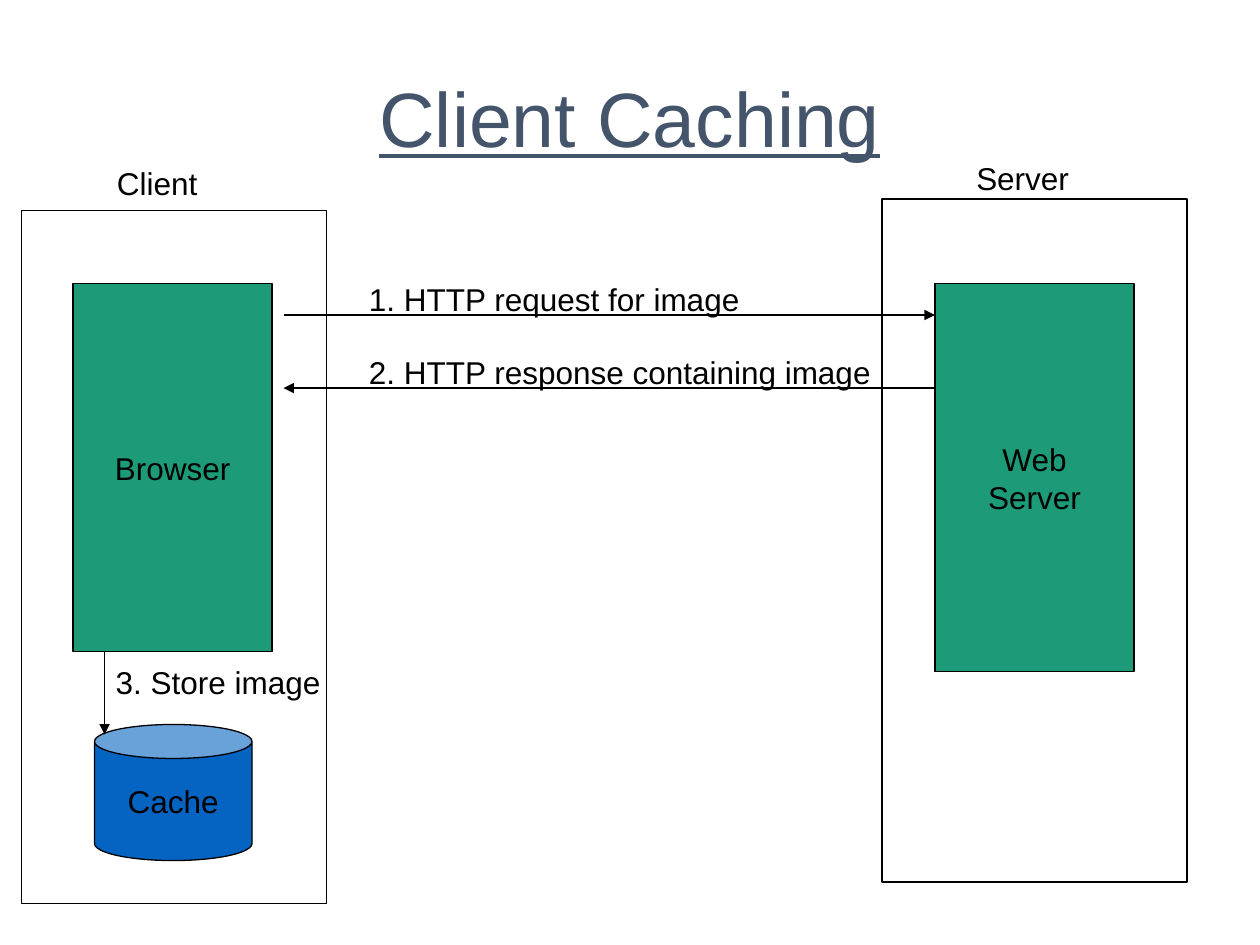
from pptx import Presentation
from pptx import util as u
from pptx.dml.color import RGBColor
from pptx.enum import shapes, text
from pptx.oxml import ns
from lxml import etree

BLACK = RGBColor(0x00, 0x00, 0x00)
SLATE = RGBColor(0x44, 0x54, 0x6A)
GREEN = RGBColor(0x1D, 0x9A, 0x78)
BLUE = RGBColor(0x05, 0x63, 0xC1)

LABEL_FORMAT = {"name": "Arial", "size": u.Pt(18)}
TITLE_FORMAT = {"name": "Arial", "size": u.Pt(44), "underline": True}
LINE_WIDTH = u.Pt(0.75)
LABEL_HEIGHT = 0.4


def inches(*lengths):
    return [u.Inches(length) for length in lengths]


def write_text(shape, lines, font_format=LABEL_FORMAT, color=BLACK,
               align=text.PP_ALIGN.CENTER, anchor=text.MSO_ANCHOR.MIDDLE, wrap=True):
    frame = shape.text_frame
    frame.word_wrap = wrap
    frame.vertical_anchor = anchor
    for index, line in enumerate(lines):
        paragraph = frame.add_paragraph() if index else frame.paragraphs[0]
        paragraph.alignment = align
        run = paragraph.add_run()
        run.text = line
        for name, value in font_format.items():
            setattr(run.font, name, value)
        run.font.color.rgb = color


def add_label(slide, box, words):
    label = slide.shapes.add_textbox(*inches(*box, LABEL_HEIGHT))
    write_text(label, [words], align=text.PP_ALIGN.LEFT,
               anchor=text.MSO_ANCHOR.TOP, wrap=False)


def add_block(slide, kind, box, fill=None, lines=()):
    block = slide.shapes.add_shape(kind, *inches(*box))
    block.shadow.inherit = False
    if fill is None:
        block.fill.background()
    else:
        block.fill.solid()
        block.fill.fore_color.rgb = fill
    block.line.color.rgb = BLACK
    block.line.width = LINE_WIDTH
    write_text(block, lines)
    return block


def add_arrow(slide, start, end):
    arrow = slide.shapes.add_connector(
        shapes.MSO_CONNECTOR.STRAIGHT, *inches(*start, *end))
    arrow.line.color.rgb = BLACK
    arrow.line.width = LINE_WIDTH
    etree.SubElement(arrow.line._get_or_add_ln(), ns.qn("a:tailEnd"), type="triangle")
    etree.SubElement(arrow._element.spPr, ns.qn("a:effectLst"))


def add_title(slide, box):
    title = slide.shapes.add_textbox(*inches(*box))
    write_text(title, ["Client Caching"], TITLE_FORMAT, SLATE)


def add_client(slide, box):
    left, top, width, height = box
    rectangle = shapes.MSO_SHAPE.RECTANGLE
    add_block(slide, rectangle, box)
    add_label(slide, (left + 0.66, top - 0.42, 0.84), "Client")
    add_block(slide, rectangle, (left + 0.41, top + 0.58, 1.58, 2.92), GREEN, ["Browser"])

    # Cache below the browser
    cache = add_block(slide, shapes.MSO_SHAPE.CAN,
                      (left + 0.58, top + 4.08, 1.25, 1.08), BLUE, ["Cache"])
    cache.adjustments[0] = 0.25
    add_arrow(slide, (left + 0.66, top + 3.5), (left + 0.66, top + 4.16))
    add_label(slide, (left + 0.65, top + 3.54, 1.83), "3. Store image")


def add_server(slide, box):
    left, top, width, height = box
    rectangle = shapes.MSO_SHAPE.RECTANGLE
    add_block(slide, rectangle, box)
    add_label(slide, (left + 0.65, top - 0.37, 0.94), "Server")
    add_block(slide, rectangle, (left + 0.42, top + 0.67, 1.58, 3.08),
              GREEN, ["Web", "Server"])


def add_messages(slide, box):
    left, top, width, height = box
    right, bottom = left + width, top + height
    # Request to the server, response back to the browser
    add_arrow(slide, (left, top), (right, top))
    add_label(slide, (left + 0.58, top - 0.33, 3.15), "1. HTTP request for image")
    add_arrow(slide, (right, bottom), (left, bottom))
    add_label(slide, (left + 0.58, bottom - 0.33, 4.19),
              "2. HTTP response containing image")


def main():
    presentation = Presentation()
    presentation.slide_width, presentation.slide_height = inches(10, 7.5)
    slide = presentation.slides.add_slide(presentation.slide_layouts[6])
    add_title(slide, (0.5, 0.3, 9, 1.25))
    add_client(slide, (0.17, 1.67, 2.42, 5.5))
    add_server(slide, (7, 1.58, 2.42, 5.42))
    add_messages(slide, (2.25, 2.5, 5.17, 0.58))
    presentation.save("out.pptx")


if __name__ == "__main__":
    main()
